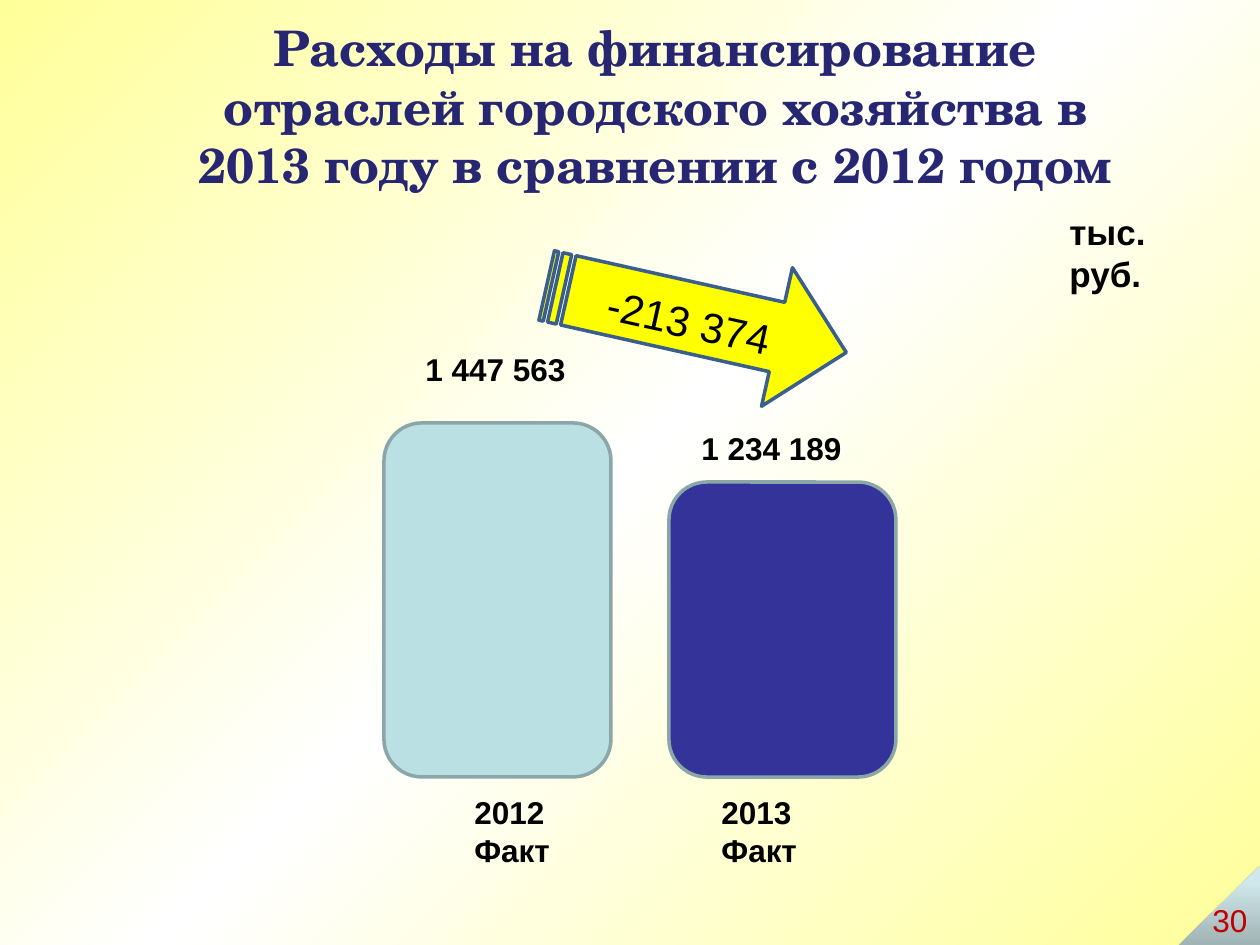
from dataclasses import dataclass

import lxml.etree
import pptx
import pptx.dml.color
import pptx.enum.shapes
import pptx.enum.text
import pptx.oxml
import pptx.oxml.ns
import pptx.util

EMU_PER_PX = 914400 / 126
COLORS = {
    "title": "262673",
    "text": "000000",
    "page": "C00000",
    "bar_2012": "BBE0E3",
    "bar_2013": "333399",
    "bar_line": "8AA6A8",
    "arrow": "FFFF00",
    "arrow_line": "3A5F8C",
}
BACKGROUND_STOPS = [(0, "FFFF99"), (50, "FFFFFF"), (100, "FFFF99")]
CORNER_STOPS = [(0, "A0B3B5"), (80, "D0E8EB"), (100, "D1EAEC")]
DRAWING_NS = 'xmlns:a="http://schemas.openxmlformats.org/drawingml/2006/main"'
SHAPES = pptx.enum.shapes.MSO_SHAPE
ALIGN = pptx.enum.text.PP_ALIGN
ANCHOR = pptx.enum.text.MSO_ANCHOR


@dataclass(frozen=True)
class Box:
    left: int
    top: int
    width: int
    height: int

    def emu(self) -> list[int]:
        lengths = (self.left, self.top, self.width, self.height)
        return [round(length * EMU_PER_PX) for length in lengths]


@dataclass(frozen=True)
class TextStyle:
    size: int
    color: str = "text"
    bold: bool = True
    font: str = "Arial"
    align: ALIGN = ALIGN.LEFT


@dataclass(frozen=True)
class Bar:
    box: Box
    color: str
    value: str
    value_box: Box
    year: str
    year_box: Box


LABEL = TextStyle(18)
BARS = [
    Bar(Box(384, 423, 227, 354), "bar_2012", "1 447 563", Box(413, 344, 166, 50),
        "2012", Box(462, 787, 118, 89)),
    Bar(Box(669, 482, 227, 295), "bar_2013", "1 234 189", Box(689, 423, 166, 50),
        "2013", Box(709, 787, 118, 89)),
]


def rgb(name: str) -> pptx.dml.color.RGBColor:
    return pptx.dml.color.RGBColor.from_string(COLORS[name])


def write_text(frame, lines: list[str], style: TextStyle) -> None:
    for index, line in enumerate(lines):
        paragraph = frame.add_paragraph() if index else frame.paragraphs[0]
        paragraph.alignment = style.align
        run = paragraph.add_run()
        run.text = line
        run.font.name = style.font
        run.font.size = pptx.util.Pt(style.size)
        run.font.bold = style.bold
        run.font.color.rgb = rgb(style.color)


def add_text(slide, box: Box, lines: list[str], style: TextStyle, wrap: bool = True) -> None:
    frame = slide.shapes.add_textbox(*box.emu()).text_frame
    frame.word_wrap = wrap
    write_text(frame, lines, style)


def add_outlined_shape(slide, kind: SHAPES, box: Box, fill: str, line: str):
    shape = slide.shapes.add_shape(kind, *box.emu())
    shape.shadow.inherit = False
    shape.fill.solid()
    shape.fill.fore_color.rgb = rgb(fill)
    shape.line.color.rgb = rgb(line)
    shape.line.width = pptx.util.Pt(2)
    return shape


def set_gradient(fill, properties, stops: list[tuple[int, str]], angle: int) -> None:
    """Give a fill any number of stops; the angle runs clockwise in degrees."""
    fill.gradient()
    gradient = properties.find(".//" + pptx.oxml.ns.qn("a:gradFill"))
    for child in list(gradient):
        gradient.remove(child)
    stop_list = lxml.etree.SubElement(gradient, pptx.oxml.ns.qn("a:gsLst"))
    for position, color in stops:
        stop_list.append(pptx.oxml.parse_xml(
            f'<a:gs {DRAWING_NS} pos="{position * 1000}"><a:srgbClr val="{color}"/></a:gs>'))
    gradient.append(pptx.oxml.parse_xml(
        f'<a:lin {DRAWING_NS} ang="{angle * 60000}" scaled="0"/>'))


def add_title(slide) -> None:
    title = slide.shapes.title
    title.left, title.top, title.width, title.height = Box(164, 26, 983, 159).emu()
    frame = title.text_frame
    frame.word_wrap = True
    frame.auto_size = pptx.enum.text.MSO_AUTO_SIZE.NONE
    frame.vertical_anchor = ANCHOR.MIDDLE
    text = "Расходы на финансирование отраслей городского хозяйства в 2013 году в сравнении с 2012 годом"
    write_text(frame, [text], TextStyle(28, "title", font="TeX Gyre Schola", align=ALIGN.CENTER))


def add_bar(slide, bar: Bar) -> None:
    add_outlined_shape(slide, SHAPES.ROUNDED_RECTANGLE, bar.box, bar.color, "bar_line")
    add_text(slide, bar.value_box, [bar.value], LABEL)
    add_text(slide, bar.year_box, [bar.year, "Факт"], LABEL)


def add_change_arrow(slide) -> None:
    arrow = add_outlined_shape(
        slide, SHAPES.STRIPED_RIGHT_ARROW, Box(543, 248, 307, 142), "arrow", "arrow_line")
    arrow.rotation = 12.6
    arrow.text_frame.vertical_anchor = ANCHOR.BOTTOM
    write_text(arrow.text_frame, ["-213 374"], TextStyle(24, bold=False, align=ALIGN.CENTER))


def add_page_corner(slide) -> None:
    corner = slide.shapes.add_shape(SHAPES.RIGHT_TRIANGLE, *Box(1179, 866, 81, 79).emu())
    corner.line.fill.background()
    properties = corner.element.spPr
    properties.find(pptx.oxml.ns.qn("a:xfrm")).set("flipH", "1")
    set_gradient(corner.fill, properties, CORNER_STOPS, 270)
    corner.shadow.inherit = False
    properties.find(pptx.oxml.ns.qn("a:effectLst")).append(pptx.oxml.parse_xml(
        f'<a:outerShdw {DRAWING_NS} blurRad="39370" dist="22860" dir="5400000" rotWithShape="0">'
        '<a:srgbClr val="000000"><a:alpha val="35000"/></a:srgbClr></a:outerShdw>'))
    add_text(slide, Box(1200, 895, 60, 50), ["30"], TextStyle(18, "page", bold=False), wrap=False)


def main() -> None:
    presentation = pptx.Presentation()
    presentation.slide_width, presentation.slide_height = Box(0, 0, 1260, 945).emu()[2:]
    slide = presentation.slides.add_slide(presentation.slide_layouts[5])
    set_gradient(slide.background.fill, slide.element, BACKGROUND_STOPS, 45)
    add_title(slide)
    add_text(slide, Box(1057, 204, 166, 55), ["тыс. руб."], TextStyle(20))
    for bar in BARS:
        add_bar(slide, bar)
    add_change_arrow(slide)
    add_page_corner(slide)
    presentation.save("out.pptx")


if __name__ == "__main__":
    main()
